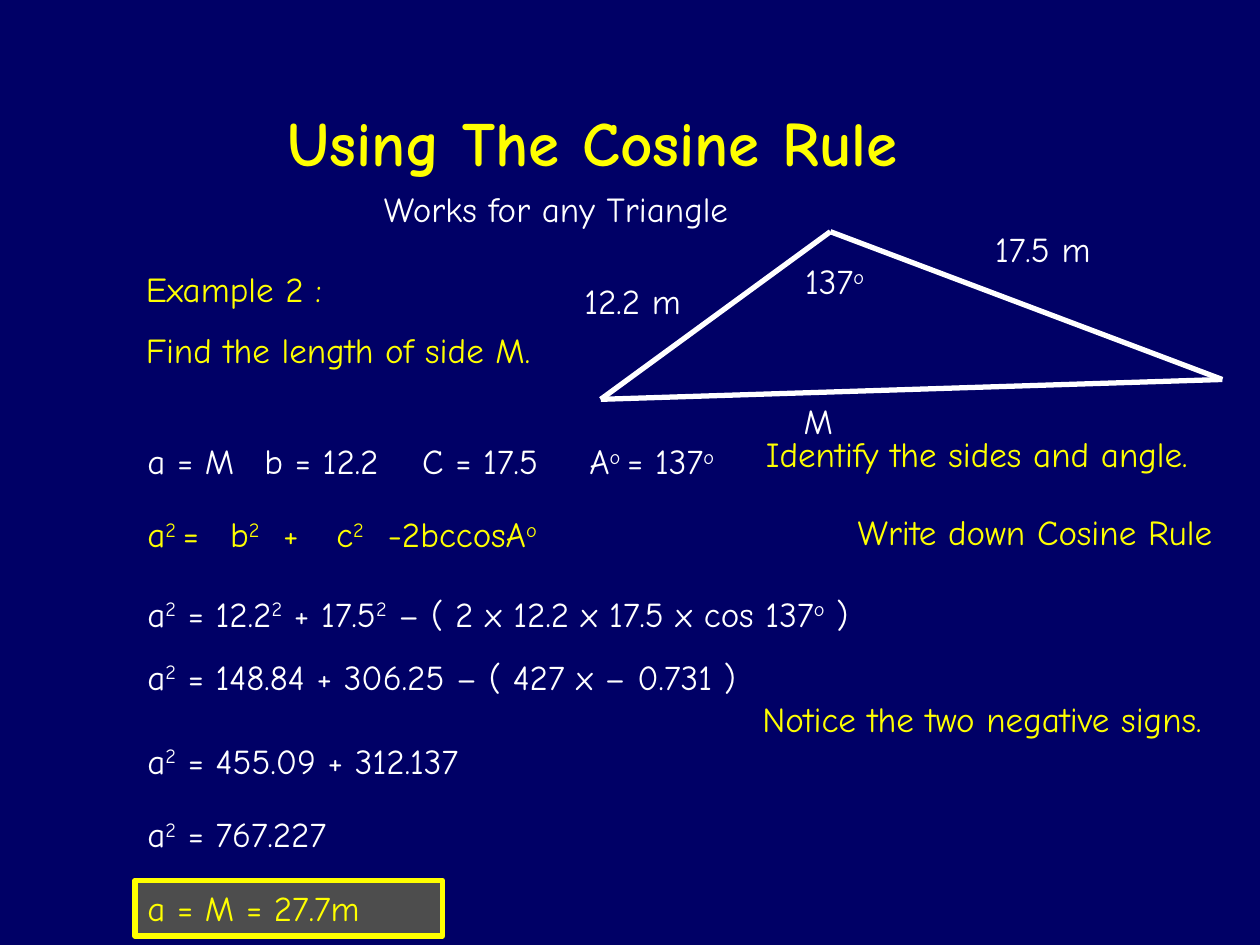
from itertools import combinations

from lxml import etree
from pptx import Presentation
from pptx import util as u
from pptx.dml.color import RGBColor
from pptx.enum import shapes, text
from pptx.oxml.ns import qn

NAVY = RGBColor(0x00, 0x00, 0x66)
YELLOW = RGBColor(0xFF, 0xFF, 0x00)
WHITE = RGBColor(0xFF, 0xFF, 0xFF)
GREY = RGBColor(0x4D, 0x4D, 0x4D)
FONT = "Comic Neue"
ROW_HEIGHT = 1.12


def add_runs(paragraph, markup, color, size=20, bold=False):
    """Write markup run by run; parts between ^ marks are superscript."""
    for index, part in enumerate(markup.split("^")):
        if not part:
            continue
        run = paragraph.add_run()
        run.text = part
        run.font.name = FONT
        run.font.size = u.Pt(size)
        run.font.bold = bold
        run.font.color.rgb = color
        if index % 2:
            run.font._element.set("baseline", "30000")


def fill_text(shape, lines, color, align=text.PP_ALIGN.LEFT, **font):
    frame = shape.text_frame
    frame.word_wrap = True
    frame.auto_size = text.MSO_AUTO_SIZE.SHAPE_TO_FIT_TEXT
    frame.vertical_anchor = text.MSO_ANCHOR.TOP
    for index, line in enumerate(lines):
        paragraph = frame.add_paragraph() if index else frame.paragraphs[0]
        paragraph.alignment = align
        if index:
            paragraph.space_before = u.Pt(11)
        add_runs(paragraph, line, color, **font)


def add_text(slide, left, top, width, height, lines, color, **options):
    box = slide.shapes.add_textbox(u.Cm(left), u.Cm(top), u.Cm(width), u.Cm(height))
    fill_text(box, lines, color, **options)
    return box


def add_heading(slide, left, top):
    title = add_text(slide, left, top, 14.35, 1.27, ["Using The Cosine Rule"],
                     YELLOW, size=36, bold=True)
    title.text_frame.auto_size = text.MSO_AUTO_SIZE.NONE
    subtitle = add_text(slide, left + 1.95, top + 1.7, 8.26, ROW_HEIGHT,
                        ["Works for any Triangle"], WHITE)
    subtitle.text_frame.word_wrap = False


def add_triangle(slide, left, top):
    corners = [(0.58, 3.58), (5.21, 0.2), (13.11, 3.18)]
    for (x1, y1), (x2, y2) in combinations(corners, 2):
        side = slide.shapes.add_connector(
            shapes.MSO_CONNECTOR.STRAIGHT, u.Cm(left + x1), u.Cm(top + y1),
            u.Cm(left + x2), u.Cm(top + y2))
        side.line.color.rgb = WHITE
        side.line.width = u.Pt(3)
        etree.SubElement(side._element.spPr, qn("a:effectLst"))
    labels = [(4.45, 0.64, 2.62, "137^o"), (8.28, 0, 3.07, "17.5 m"),
              (0, 1.04, 2.9, "12.2 m"), (4.42, 3.45, 2.31, "M")]
    for x, y, width, label in labels:
        add_text(slide, left + x, top + y, width, ROW_HEIGHT, [label], WHITE)


def add_row(slide, left, top, cells, color):
    """Place (offset, width, markup) cells side by side on one line."""
    for offset, width, markup in cells:
        add_text(slide, left + offset, top, width, ROW_HEIGHT, [markup], color)


def add_working(slide, left, top):
    known = [(0, 2.54, "a = M"), (2.36, 4.65, "b = 12.2"),
             (5.54, 4.65, "C = 17.5"), (8.91, 4.24, "A^o ^= 137^o")]
    add_row(slide, left, top, known, WHITE)
    rule = [(0, 2.11, "a^2 ^="), (1.67, 1.27, "b^2"), (2.74, 1.07, "+"),
            (3.81, 1.27, "c^2"), (4.85, 4.24, "-2bccosA^o")]
    add_row(slide, left, top + 1.47, rule, YELLOW)
    steps = [(3.07, "12.2^2^ + 17.5^2^ – ( 2 x 12.2 x 17.5 x cos 137^o^ )"),
             (4.34, "148.84 + 306.25 – ( 427 x – 0.731 )"),
             (6.04, "455.09 + 312.137"), (7.52, "767.227")]
    for offset, value in steps:
        add_row(slide, left, top + offset, [(0, 18.6, f"a^2^ = {value}")], WHITE)


def add_notes(slide, right, top):
    """Set the yellow remarks in boxes that end at the right edge."""
    notes = [(0, 10.21, "Identify the sides and angle.", text.PP_ALIGN.LEFT),
             (1.57, 8.36, "Write down Cosine Rule", text.PP_ALIGN.LEFT),
             (5.35, 11.2, "Notice the two negative signs.", text.PP_ALIGN.CENTER)]
    for offset, width, note, align in notes:
        add_text(slide, right - width, top + offset, width, ROW_HEIGHT,
                 [note], YELLOW, align=align)


def add_answer(slide, left, top, width, height):
    answer = slide.shapes.add_shape(shapes.MSO_SHAPE.RECTANGLE, u.Cm(left),
                                    u.Cm(top), u.Cm(width), u.Cm(height))
    answer.shadow.inherit = False
    answer.fill.solid()
    answer.fill.fore_color.rgb = GREY
    answer.line.color.rgb = YELLOW
    answer.line.width = u.Pt(3)
    fill_text(answer, ["a = M = 27.7m"], YELLOW)


def main():
    presentation = Presentation()
    presentation.slide_width = u.Cm(25.4)
    presentation.slide_height = u.Cm(19.05)
    slide = presentation.slides.add_slide(presentation.slide_layouts[6])
    slide.background.fill.solid()
    slide.background.fill.fore_color.rgb = NAVY

    add_text(slide, 2.69, 5.26, 9.45, 2.39,
             ["Example 2 :", "Find the length of side M."], YELLOW)
    add_triangle(slide, 11.53, 4.47)
    add_working(slide, 2.72, 8.74)
    add_notes(slide, 25.4, 8.59)
    add_answer(slide, 2.72, 17.75, 6.2, ROW_HEIGHT)
    add_heading(slide, 5.54, 1.96)
    presentation.save("out.pptx")


if __name__ == "__main__":
    main()
